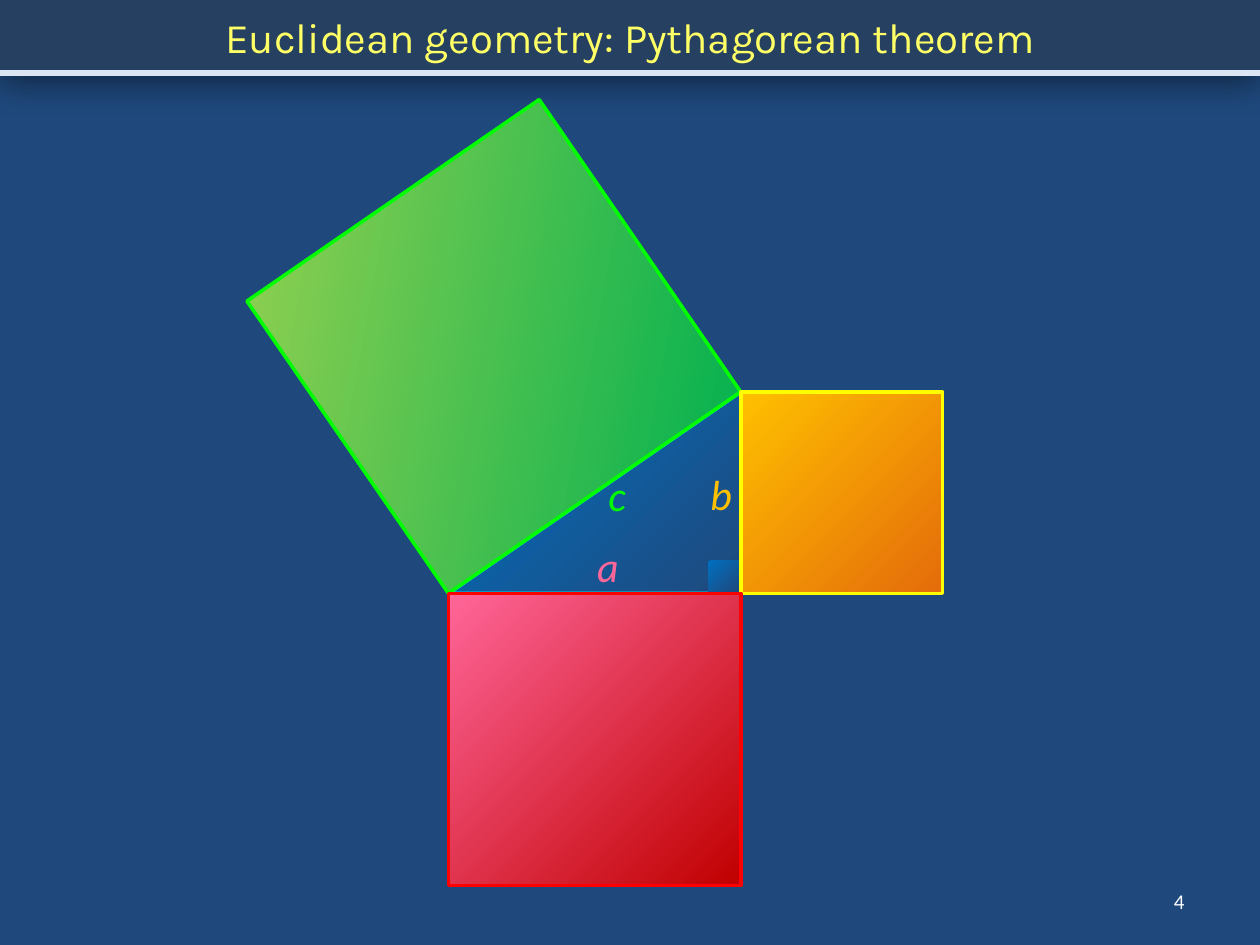
"""Build a slide showing the squares on the sides of a right triangle."""
from math import atan2, degrees, hypot

from lxml.etree import SubElement
from pptx import Presentation
from pptx.dml.color import RGBColor as RGB
from pptx.enum.shapes import MSO_SHAPE as SHAPE
from pptx.enum.text import MSO_ANCHOR as ANCHOR, MSO_AUTO_SIZE as AUTO, PP_ALIGN as ALIGN
from pptx.oxml.ns import qn
from pptx.util import Inches, Pt

NAVY, SLATE, PALE = RGB(0x1F, 0x49, 0x7D), RGB(0x25, 0x40, 0x61), RGB(0xDC, 0xE6, 0xF2)
WHITE, LEMON, YELLOW = RGB(255, 255, 255), RGB(255, 255, 0x66), RGB(255, 255, 0)
BLUE, CYAN = RGB(0, 0x70, 0xC0), RGB(0, 255, 255)
LIME, LEAF, GREEN = RGB(0x92, 0xD0, 0x50), RGB(0, 0xB0, 0x50), RGB(0, 255, 0)
GOLD, ORANGE = RGB(255, 0xC0, 0), RGB(0xE4, 0x6C, 0x0A)
PINK, CRIMSON, RED = RGB(255, 0x66, 0x99), RGB(0xC0, 0, 0), RGB(255, 0, 0)

W, H = 10, 7.5
TITLE, TITLE_H = "Euclidean geometry: Pythagorean theorem", 0.58
PAGE = "4"
LEG_A, LEG_B = 2.32, 1.6
LEFT, TOP = 3.56, 3.11
RIGHT, BASE = LEFT + LEG_A, TOP + LEG_B
MARK, MARK_GAP = 0.25, 0.01
LABELS = [
    ("a", PINK, 4.64, 4.24, 0.38),
    ("b", GOLD, 5.54, 3.67, 0.38),
    ("c", GREEN, 4.73, 3.68, 0.34),
]


def add_box(slide, kind, x, y, w, h, colors=(), line=None, width=2):
    sp = slide.shapes.add_shape(kind, *map(Inches, (x, y, w, h)))
    sp.shadow.inherit = False
    if len(colors) == 2:
        sp.fill.gradient()
        sp.fill.gradient_angle = 315
        for stop, color in zip(sp.fill.gradient_stops, colors):
            stop.color.rgb = color
    elif colors:
        sp.fill.solid()
        sp.fill.fore_color.rgb = colors[0]
    else:
        sp.fill.background()
    if line is None:
        sp.line.fill.background()
    else:
        sp.line.color.rgb = line
        sp.line.width = Pt(width)
    return sp


def add_square(slide, x, y, side, colors, line=None):
    return add_box(slide, SHAPE.RECTANGLE, x, y, side, side, colors, line)


def write(sp, text, size, font, color, align=ALIGN.LEFT, anchor=ANCHOR.TOP, italic=None):
    tf = sp.text_frame
    tf.vertical_anchor = anchor
    p = tf.paragraphs[0]
    p.alignment = align
    r = p.add_run()
    r.text = text
    r.font.size, r.font.name, r.font.italic = Pt(size), font, italic
    r.font.color.rgb = color
    return tf


def add_shadow(sp, blur, dist, angle, alpha):
    effects = sp._element.spPr.find(qn("a:effectLst"))
    shadow = SubElement(effects, qn("a:outerShdw"), blurRad=str(Pt(blur)),
                        dist=str(Pt(dist)), dir=str(angle * 60000), algn="t", rotWithShape="0")
    color = SubElement(shadow, qn("a:srgbClr"), val="000000")
    SubElement(color, qn("a:alpha"), val=str(alpha * 1000))


def add_frame(slide):
    bar = add_box(slide, SHAPE.RECTANGLE, 0, 0, W, TITLE_H, [SLATE])
    add_shadow(bar, 20, 5, 90, 50)
    write(bar, TITLE, 24, "Karla", LEMON, ALIGN.CENTER, ANCHOR.MIDDLE)
    add_box(slide, SHAPE.RECTANGLE, -0.17, TITLE_H, W + 0.33, 7.17, line=PALE, width=3)
    number = slide.shapes.add_textbox(*map(Inches, (7.17, 6.95, 2.33, 0.4)))
    write(number, PAGE, 12, "Calibri", WHITE, ALIGN.RIGHT, ANCHOR.MIDDLE).word_wrap = True


def add_figure(slide):
    triangle = add_box(slide, SHAPE.ISOSCELES_TRIANGLE, LEFT, TOP, LEG_A, LEG_B,
                       [BLUE, NAVY], CYAN)
    triangle.adjustments[0] = 1
    side = hypot(LEG_A, LEG_B)
    cx, cy = LEFT + (LEG_A - LEG_B) / 2, TOP + (LEG_B - LEG_A) / 2
    square_c = add_square(slide, cx - side / 2, cy - side / 2, side, [LIME, LEAF], GREEN)
    square_c.rotation = -degrees(atan2(LEG_B, LEG_A))
    for text, color, x, y, w in LABELS:
        label = slide.shapes.add_textbox(*map(Inches, (x, y, w, 0.5)))
        tf = write(label, text, 24, "Calibri", color, italic=True)
        tf.word_wrap, tf.auto_size = False, AUTO.SHAPE_TO_FIT_TEXT
    inset = MARK + MARK_GAP
    add_square(slide, RIGHT - inset, BASE - inset, MARK, [BLUE, NAVY])
    add_square(slide, RIGHT, TOP, LEG_B, [GOLD, ORANGE], YELLOW)
    add_square(slide, LEFT, BASE, LEG_A, [PINK, CRIMSON], RED)


def main():
    prs = Presentation()
    prs.slide_width, prs.slide_height = Inches(W), Inches(H)
    slide = prs.slides.add_slide(prs.slide_layouts[6])
    slide.background.fill.solid()
    slide.background.fill.fore_color.rgb = NAVY
    add_frame(slide)
    add_figure(slide)
    prs.save("out.pptx")


if __name__ == "__main__":
    main()
